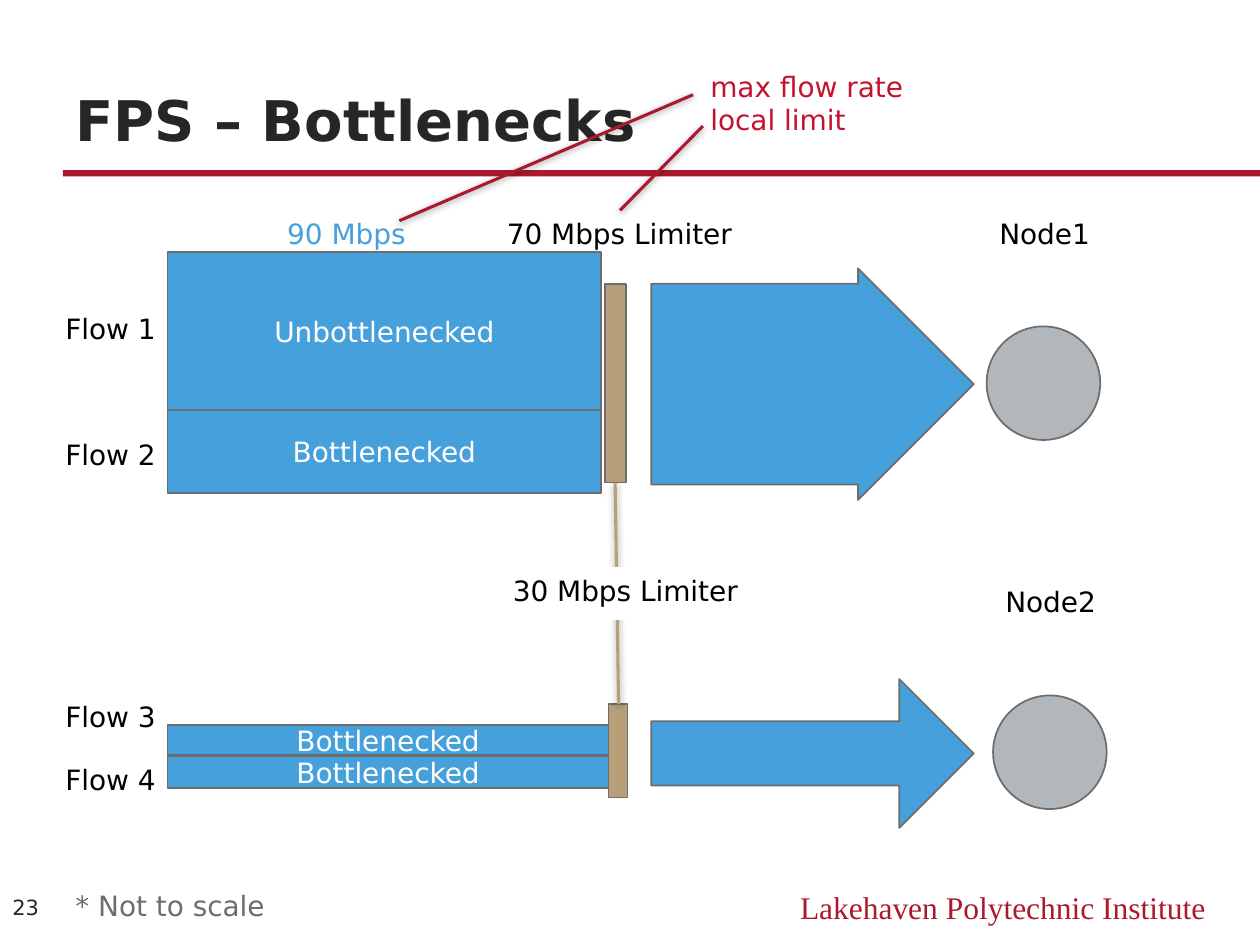
import pptx
import pptx.util
import pptx.dml.color
import pptx.enum.shapes
import pptx.enum.text
import pptx.oxml
import pptx.oxml.ns

Cm = pptx.util.Cm
Pt = pptx.util.Pt
RGBColor = pptx.dml.color.RGBColor
Shape = pptx.enum.shapes.MSO_SHAPE
Align = pptx.enum.text.PP_ALIGN
Anchor = pptx.enum.text.MSO_ANCHOR

CRIMSON = RGBColor(0xAB, 0x19, 0x2D)
RED = RGBColor(0xC4, 0x12, 0x2F)
BLUE = RGBColor(0x46, 0xA0, 0xDC)
TAN = RGBColor(0xB7, 0xA0, 0x79)
SILVER = RGBColor(0xB2, 0xB7, 0xBB)
GRAY = RGBColor(0x6D, 0x6D, 0x6D)
INK = RGBColor(0x26, 0x26, 0x26)
BLACK = RGBColor(0, 0, 0)
WHITE = RGBColor(0xFF, 0xFF, 0xFF)

SHADOW = (
    '<a:effectLst %s><a:outerShdw blurRad="50800" dist="12700" dir="5280000">'
    '<a:srgbClr val="000000"><a:alpha val="40000"/></a:srgbClr>'
    '</a:outerShdw></a:effectLst>' % pptx.oxml.ns.nsdecls("a")
)

deck = pptx.Presentation()
deck.slide_width, deck.slide_height = Cm(25.4), Cm(19.05)
page = deck.slides.add_slide(deck.slide_layouts[6])


def add_box(left, top, width, height, text="", color=BLACK, size=16,
            align=Align.LEFT, anchor=Anchor.TOP, wrap=False,
            kind=None, fill=None, outline=GRAY, font="DejaVu Sans", bold=False):
    """Add a text box, or a filled shape when a kind is given."""
    place = Cm(left), Cm(top), Cm(width), Cm(height)
    if kind is None:
        box = page.shapes.add_textbox(*place)
    else:
        box = page.shapes.add_shape(kind, *place)
        box.shadow.inherit = False
        box.fill.solid()
        box.fill.fore_color.rgb = fill
        if outline is None:
            box.line.fill.background()
        else:
            box.line.color.rgb = outline
            box.line.width = Pt(1)
    frame = box.text_frame
    frame.auto_size = pptx.enum.text.MSO_AUTO_SIZE.NONE
    frame.word_wrap = wrap
    frame.vertical_anchor = anchor
    frame.text = text
    for para in frame.paragraphs:
        para.alignment = align
        for span in para.runs:
            span.font.name = font
            span.font.size = Pt(size)
            span.font.bold = bold
            span.font.color.rgb = color
    return box


def add_line(x1, y1, x2, y2, color):
    line = page.shapes.add_connector(
        pptx.enum.shapes.MSO_CONNECTOR.STRAIGHT, Cm(x1), Cm(y1), Cm(x2), Cm(y2))
    line.line.color.rgb = color
    line.line.width = Pt(1.75)
    line._element.spPr.append(pptx.oxml.parse_xml(SHADOW))


# Title, rule and footer
add_box(1.27, 3.43, 24.13, 0.13, kind=Shape.RECTANGLE, fill=CRIMSON, outline=None)
add_box(15.24, 17.78, 9.32, 1.02, "Lakehaven Polytechnic Institute", CRIMSON, 18,
        align=Align.RIGHT, wrap=True, font="Times New Roman")
add_box(1.27, 0.97, 22.86, 2.24, "FPS – Bottlenecks", INK, 32,
        anchor=Anchor.BOTTOM, wrap=True, bold=True)
add_box(1.27, 17.78, 14.17, 0.84, "* Not to scale", GRAY, wrap=True)
add_box(0, 17.75, 1.27, 1.09, "23", INK, 12, anchor=Anchor.MIDDLE, wrap=True)

# Nodes and their labels
for name, label_left, label_top, left, top in (
        ("Node1", 19.69, 4.24, 19.89, 6.58),
        ("Node2", 19.81, 11.66, 20.02, 14.02)):
    add_box(left, top, 2.29, 2.29, kind=Shape.OVAL, fill=SILVER)
    add_box(label_left, label_top, 2.74, 1.07, name, align=Align.CENTER)

# Limiters, joined by a line behind the lower label
for left, top, width, height in ((12.19, 5.72, 0.43, 4.01), (12.27, 14.2, 0.38, 1.88)):
    add_box(left, top, width, height, kind=Shape.RECTANGLE, fill=TAN)
add_line(12.4, 9.73, 12.47, 14.2, TAN)
add_box(9.53, 4.24, 5.92, 1.07, "70 Mbps Limiter", align=Align.CENTER)
add_box(9.65, 11.43, 5.92, 1.07, "30 Mbps Limiter", align=Align.CENTER,
        kind=Shape.RECTANGLE, fill=WHITE, outline=None)

# Outgoing traffic arrows
for top, height, shaft in ((5.41, 4.67, 0.867), (13.69, 3.0, 0.432)):
    arrow = add_box(13.13, top, 6.5, height, kind=Shape.RIGHT_ARROW, fill=BLUE)
    arrow.adjustments[0] = shaft
    arrow.adjustments[1] = 0.5

# Flow bars and their labels
for number, (label_top, top, width, height, state) in enumerate((
        (6.15, 5.08, 8.74, 3.18, "Unbottlenecked"),
        (8.69, 8.26, 8.74, 1.68, "Bottlenecked"),
        (13.97, 14.61, 8.89, 0.61, "Bottlenecked"),
        (15.24, 15.24, 8.89, 0.64, "Bottlenecked")), start=1):
    add_box(3.38, top, width, height, state, WHITE, align=Align.CENTER,
            anchor=Anchor.MIDDLE, kind=Shape.RECTANGLE, fill=BLUE)
    add_box(1.07, label_top, 2.01, 1.07, f"Flow {number}")

# Rate label and callouts
add_box(5.08, 4.24, 3.81, 0.79, "90 Mbps", BLUE, align=Align.CENTER)
add_box(14.07, 1.27, 9.63, 1.91, "max flow rate\nlocal limit", RED, wrap=True)
add_line(13.97, 1.91, 8.05, 4.45, CRIMSON)
add_line(14.17, 2.54, 12.5, 4.24, CRIMSON)

deck.save("out.pptx")
